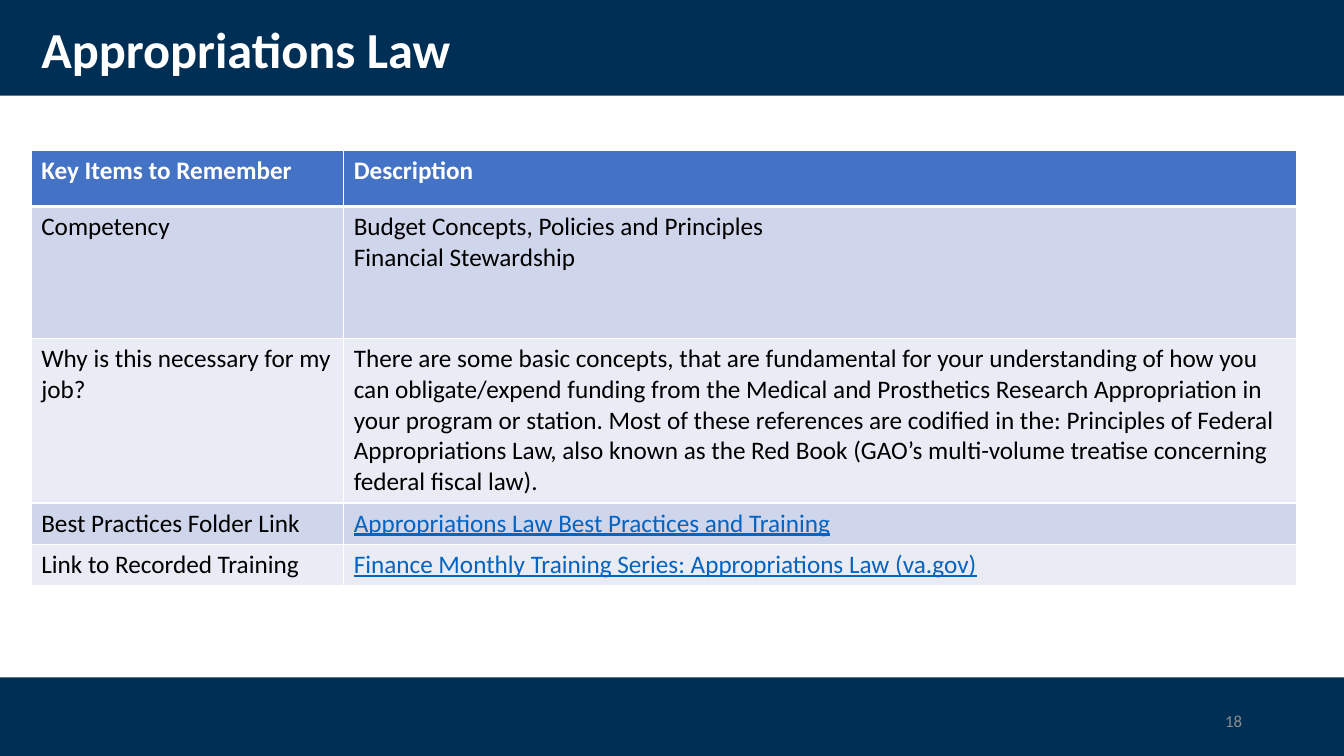
from dataclasses import dataclass

from pptx import Presentation
from pptx.dml.color import RGBColor as Color
from pptx.enum.shapes import MSO_SHAPE as Shape
from pptx.enum.text import MSO_ANCHOR as Anchor, PP_ALIGN as Align
from pptx.oxml import parse_xml
from pptx.oxml.ns import nsdecls
from pptx.util import Inches, Pt


@dataclass(frozen=True)
class Theme:
    font: str = "Calibri"
    navy: str = "002F56"
    white: str = "FFFFFF"
    black: str = "000000"
    header: str = "4472C4"
    bands: tuple = ("CFD5EA", "E9EBF5")
    link: str = "0563C1"
    number: str = "8C8C8C"
    title_size: int = 36
    table_size: int = 18
    number_size: int = 12


THEME = Theme()
COLUMNS, ROWS = 133.33, 75  # grid of tenths of an inch
MARGIN = 3.1
TABLE_TOP = 14.9
TABLE_COLUMNS = (31, 94.5)
TABLE_ROWS = (5.6, 13.1, 16.3, 4.1, 4.1)
LINK_ROWS = (3, 4)

ITEMS = (
    ("Key Items to Remember", "Description"),
    ("Competency", "Budget Concepts, Policies and Principles\nFinancial Stewardship"),
    (
        "Why is this necessary for my job?",
        "There are some basic concepts, that are fundamental for your understanding "
        "of how you can obligate/expend funding from the Medical and Prosthetics "
        "Research Appropriation in your program or station. Most of these references "
        "are codified in the: Principles of Federal Appropriations Law, also known as "
        "the Red Book (GAO’s multi-volume treatise concerning federal fiscal law).",
    ),
    ("Best Practices Folder Link", "Appropriations Law Best Practices and Training"),
    ("Link to Recorded Training",
     "Finance Monthly Training Series: Appropriations Law (va.gov)"),
)


def grid(*units):
    return [Inches(unit / 10) for unit in units]


def style_text(frame, size, color, bold=False, underline=False, align=Align.LEFT):
    for para in frame.paragraphs:
        para.alignment = align
        font = para.font
        font.name, font.size = THEME.font, Pt(size)
        font.bold, font.underline = bold, underline
        font.color.rgb = Color.from_string(color)


def add_bar(page, top, height):
    """Add a full-width band behind the title placeholder."""
    bar = page.shapes.add_shape(Shape.RECTANGLE, *grid(0, top, COLUMNS, height))
    bar.shadow.inherit = False
    bar.fill.solid()
    bar.fill.fore_color.rgb = Color.from_string(THEME.navy)
    bar.line.fill.background()
    page.shapes.title._element.addprevious(bar._element)


def set_title(page, text):
    title = page.shapes.title
    title.left, title.top, title.width, title.height = grid(MARGIN, 1.8, 115, 6.8)
    frame = title.text_frame
    frame.text = text
    frame.vertical_anchor = Anchor.MIDDLE
    frame.paragraphs[0].line_spacing = 0.9
    style_text(frame, THEME.title_size, THEME.white, bold=True)


def set_borders(cell, bottom_width):
    widths = {"lnL": 1, "lnR": 1, "lnT": 1, "lnB": bottom_width}
    for side, width in widths.items():
        cell._tc.get_or_add_tcPr().append(parse_xml(
            f'<a:{side} {nsdecls("a")} w="{Pt(width)}"><a:solidFill>'
            f'<a:srgbClr val="{THEME.white}"/></a:solidFill></a:{side}>'
        ))


def fill_cell(cell, text, row, column):
    is_header = row == 0
    is_link = row in LINK_ROWS and column == 1
    cell.text = text
    set_borders(cell, 3 if is_header else 1)
    fill = THEME.header if is_header else THEME.bands[(row - 1) % 2]
    cell.fill.solid()
    cell.fill.fore_color.rgb = Color.from_string(fill)
    color = THEME.white if is_header else THEME.link if is_link else THEME.black
    style_text(cell.text_frame, THEME.table_size, color, is_header, is_link)


def add_items_table(page):
    table = page.shapes.add_table(
        len(TABLE_ROWS), len(TABLE_COLUMNS),
        *grid(MARGIN, TABLE_TOP, sum(TABLE_COLUMNS), sum(TABLE_ROWS)),
    ).table
    for column, width in zip(table.columns, grid(*TABLE_COLUMNS)):
        column.width = width
    for row, height in zip(table.rows, grid(*TABLE_ROWS)):
        row.height = height
    for row, texts in enumerate(ITEMS):
        for column, text in enumerate(texts):
            fill_cell(table.cell(row, column), text, row, column)


def add_page_number(page, number):
    box = page.shapes.add_textbox(*grid(94.2, 69.5, 30, 4))
    frame = box.text_frame
    frame.word_wrap = True
    frame.vertical_anchor = Anchor.MIDDLE
    frame.text = number
    style_text(frame, THEME.number_size, THEME.number, align=Align.RIGHT)


def main():
    deck = Presentation()
    deck.slide_width, deck.slide_height = grid(COLUMNS, ROWS)
    page = deck.slides.add_slide(deck.slide_layouts.get_by_name("Title Only"))
    add_bar(page, 0, 9.5)
    add_bar(page, 67.2, ROWS - 67.2)
    set_title(page, "Appropriations Law")
    add_items_table(page)
    add_page_number(page, "18")
    deck.save("out.pptx")


if __name__ == "__main__":
    main()
